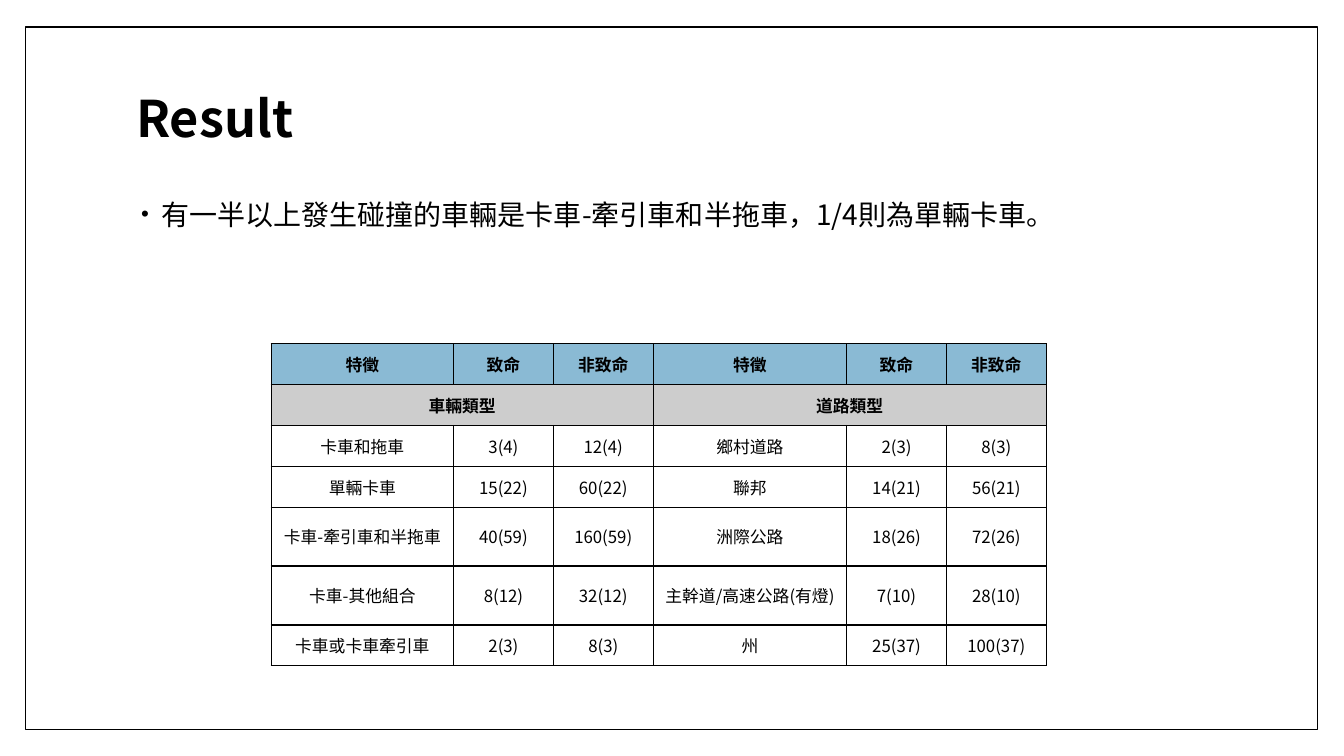
import pptx
import pptx.util
import pptx.dml.color
import pptx.enum.shapes
import pptx.enum.text
import pptx.oxml
import pptx.oxml.ns

Pt = pptx.util.Pt
FACE = "Noto Sans CJK SC"
INK, PAPER, BLUE, GREY = "000000", "FFFFFF", "8ABAD4", "CDCDCD"
WIDTHS = (130.3, 71.3, 71.3, 138.2, 71.3, 71.3)
ROWS = (
    ("特徵", "致命", "非致命", "特徵", "致命", "非致命"),
    ("車輛類型", "", "", "道路類型", "", ""),
    ("卡車和拖車", "3(4)", "12(4)", "鄉村道路", "2(3)", "8(3)"),
    ("單輛卡車", "15(22)", "60(22)", "聯邦", "14(21)", "56(21)"),
    ("卡車-牽引車和半拖車", "40(59)", "160(59)", "洲際公路", "18(26)", "72(26)"),
    ("卡車-其他組合", "8(12)", "32(12)", "主幹道/高速公路(有燈)", "7(10)", "28(10)"),
    ("卡車或卡車牽引車", "2(3)", "8(3)", "州", "25(37)", "100(37)"),
)


def shade(hue):
    """Return the colour for a hex string."""
    return pptx.dml.color.RGBColor.from_string(hue)


def node(tag, body="", attrs=""):
    """Build one DrawingML element."""
    space = pptx.oxml.ns.nsdecls("a")
    return pptx.oxml.parse_xml(f"<a:{tag} {space} {attrs}>{body}</a:{tag}>")


def style(para, size, bold=False):
    """Set the font of a whole paragraph."""
    font = para.font
    font.size, font.bold = Pt(size), bold
    font.color.rgb = shade(INK)
    font.name = FACE
    para._p.pPr.find(pptx.oxml.ns.qn("a:defRPr")).append(
        node("ea", attrs=f'typeface="{FACE}"'))


def place(shape, box):
    """Move a shape to a box given in points."""
    shape.left, shape.top, shape.width, shape.height = map(Pt, box)


def frame(slide, box):
    """Draw the page border behind everything else."""
    rect = slide.shapes.add_shape(
        pptx.enum.shapes.MSO_SHAPE.RECTANGLE, *map(Pt, box))
    rect.shadow.inherit = False
    rect.fill.solid()
    rect.fill.fore_color.rgb = shade(PAPER)
    rect.line.color.rgb = shade(INK)
    rect.line.width = Pt(1)
    slide.shapes._spTree.insert(2, rect._element)


def title(slide, box, text):
    """Fill the title placeholder."""
    head = slide.shapes.title
    place(head, box)
    head.text_frame.text = text
    head.text_frame.vertical_anchor = pptx.enum.text.MSO_ANCHOR.MIDDLE
    para = head.text_frame.paragraphs[0]
    para.alignment = pptx.enum.text.PP_ALIGN.LEFT
    para.line_spacing = 0.9
    style(para, 36, True)


def points(slide, box, text):
    """Fill the body placeholder with one bullet."""
    body = slide.placeholders[1]
    place(body, box)
    body.text_frame.text = text
    para = body.text_frame.paragraphs[0]
    para.line_spacing, para.space_before = 1.5, Pt(14)
    props = para._p.get_or_add_pPr()
    props.set("marL", str(Pt(18)))
    props.set("indent", str(Pt(-14.4)))
    props.append(node("buClr", f'<a:srgbClr val="{INK}"/>'))
    props.append(node("buSzPct", attrs='val="80000"'))
    props.append(node("buFont", attrs='typeface="Arial"'))
    props.append(node("buChar", attrs='char="•"'))
    style(para, 20)


def paint(cell, hue):
    """Give a cell its borders and fill."""
    props = cell._tc.get_or_add_tcPr()
    ink = f'<a:solidFill><a:srgbClr val="{INK}"/></a:solidFill>'
    for side in "LRTB":
        props.append(node(f"ln{side}", ink, f'w="{Pt(1)}"'))
    cell.fill.solid()
    cell.fill.fore_color.rgb = shade(hue)


def grid(slide, box):
    """Add the table of crash counts."""
    table = slide.shapes.add_table(
        len(ROWS), len(WIDTHS), *map(Pt, box)).table
    for col, width in zip(table.columns, WIDTHS):
        col.width = Pt(width)
    for r, row in enumerate(ROWS):
        table.rows[r].height = Pt(box[3] / len(ROWS))
        for c, text in enumerate(row):
            cell = table.cell(r, c)
            cell.vertical_anchor = pptx.enum.text.MSO_ANCHOR.MIDDLE
            cell.text = text
            para = cell.text_frame.paragraphs[0]
            para.alignment = pptx.enum.text.PP_ALIGN.CENTER
            style(para, 12, r < 2)
            paint(cell, (BLUE, GREY)[r] if r < 2 else PAPER)
    for c in (0, 3):
        table.cell(1, c).merge(table.cell(1, c + 2))


def main():
    """Build and save the slide."""
    deck = pptx.Presentation()
    deck.slide_width, deck.slide_height = Pt(960), Pt(540)
    slide = deck.slides.add_slide(deck.slide_layouts[1])
    frame(slide, (18, 19.4, 923, 501.8))
    title(slide, (90, 48.2, 777.6, 77), "Result")
    points(slide, (90, 125.3, 777.6, 355),
           "有一半以上發生碰撞的車輛是卡車-牽引車和半拖車，1/4則為單輛卡車。")
    grid(slide, (193.7, 245.5, 553.7, 204.5))
    deck.save("out.pptx")


if __name__ == "__main__":
    main()
